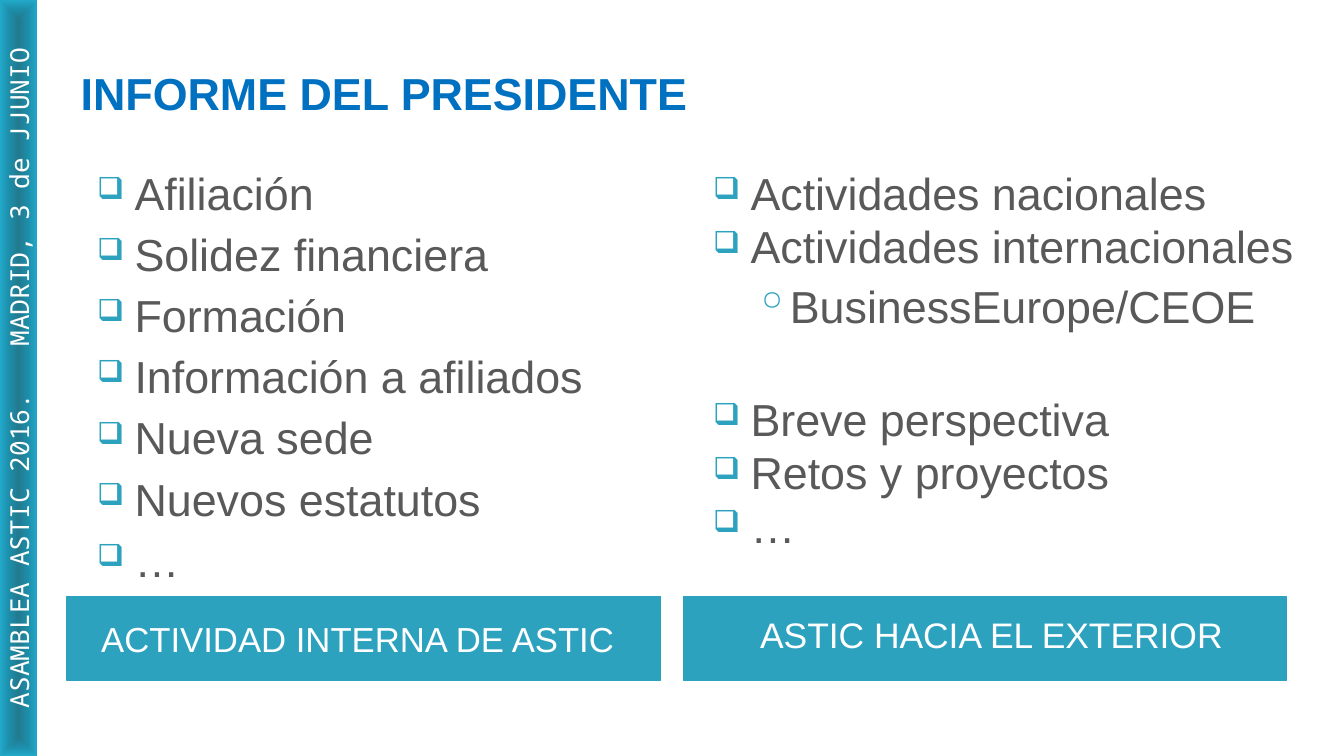
from lxml import etree
from pptx import Presentation
from pptx.dml.color import RGBColor
from pptx.enum import shapes, text
from pptx.oxml import ns, parse_xml
from pptx.util import Pt

COLORS = {"teal": "2DA2BF", "blue": "0070C0", "gray": "595959", "white": "FFFFFF",
          "bar_core": "227A8F", "bar_middle": "1D8EAA", "bar_edge": "22A9CA"}
LEFT, ALIGN_CENTER = text.PP_ALIGN.LEFT, text.PP_ALIGN.CENTER


def write(para, words, size=24, color="gray", font="Arial", bold=False,
          align=LEFT, before=0, bullet=None, scale=100, indent=0, hang=0):
    """Add a formatted run, with an optional bullet on the paragraph."""
    if bullet:
        props = para._p.get_or_add_pPr()
        props.set("marL", str(Pt(indent)))
        props.set("indent", str(-Pt(hang)))
        tint = etree.SubElement(props, ns.qn("a:buClr"))
        etree.SubElement(tint, ns.qn("a:srgbClr"), val=COLORS["teal"])
        etree.SubElement(props, ns.qn("a:buSzPct"), val=str(scale * 1000))
        etree.SubElement(props, ns.qn("a:buChar"), char=bullet)
    para.alignment = align
    if before:
        para.space_before = Pt(before)
    span = para.add_run()
    span.text = words
    span.font.name, span.font.size, span.font.bold = font, Pt(size), bold
    span.font.color.rgb = RGBColor.from_string(COLORS[color])
    return span


deck = Presentation()
deck.slide_width, deck.slide_height = Pt(720), Pt(405)
page = deck.slides.add_slide(deck.slide_layouts[5])

# Side bar, turned to read upwards
bar_length, bar_width = 405, 20
bar = page.shapes.add_shape(
    shapes.MSO_SHAPE.RECTANGLE, Pt((bar_width - bar_length) / 2),
    Pt((bar_length - bar_width) / 2), Pt(bar_length), Pt(bar_width))
bar.rotation = 270
bar.shadow.inherit = False
bar.line.fill.background()
stops = "".join(
    f'<a:gs pos="{place * 1000}"><a:srgbClr val="{COLORS[name]}"/></a:gs>'
    for place, name in ((0, "bar_core"), (50, "bar_middle"), (100, "bar_edge")))
gradient = parse_xml(
    f'<a:gradFill {ns.nsdecls("a")}><a:gsLst>{stops}</a:gsLst><a:path path="shape">'
    '<a:fillToRect l="50000" t="50000" r="50000" b="50000"/></a:path></a:gradFill>')
bar._element.spPr.find(ns.qn("a:prstGeom")).addnext(gradient)
frame = bar.text_frame
frame.vertical_anchor = text.MSO_ANCHOR.MIDDLE
frame.margin_top = frame.margin_bottom = 0
mono = {"size": 14, "color": "white", "font": "Noto Sans Mono", "align": ALIGN_CENTER}
write(frame.paragraphs[0], "ASAMBLEA ASTIC 2016.", **mono)
gap = write(frame.paragraphs[0], " ", **mono)
gap.font._element.set("spc", "1680")  # widens the space to three characters
write(frame.paragraphs[0], "MADRID, 3 de JJUNIO", **mono)

# Title
title = page.shapes.title
title.left, title.top, title.width, title.height = Pt(36), Pt(16), Pt(648), Pt(67.5)
title.text_frame.vertical_anchor = text.MSO_ANCHOR.MIDDLE
write(title.text_frame.paragraphs[0], "INFORME DEL PRESIDENTE", color="blue", bold=True)

# Bulleted columns: words, level, space before
lists = [
    (36, 318, [("Afiliación", 0, 0)] + [(words, 0, 4) for words in (
        "Solidez financiera", "Formación", "Información a afiliados",
        "Nueva sede", "Nuevos estatutos", "…")]),
    (366, 340, [("Actividades nacionales", 0, 0), ("Actividades internacionales", 0, 0),
                ("BusinessEurope/CEOE", 1, 3.2), ("Breve perspectiva", 0, 31.5),
                ("Retos y proyectos", 0, 0), ("…", 0, 0)]),
]
levels = [{"bullet": "❑", "scale": 68, "indent": 29, "hang": 20},
          {"bullet": "◦", "scale": 100, "indent": 49, "hang": 18}]
for left, width, items in lists:
    box = page.shapes.add_textbox(Pt(left), Pt(85), Pt(width), Pt(232.5))
    frame = box.text_frame
    frame.word_wrap = True
    for index, (words, level, before) in enumerate(items):
        para = frame.add_paragraph() if index else frame.paragraphs[0]
        para.level = level
        write(para, words, before=before, **levels[level])

# Column captions
captions = [(36, 318, "ACTIVIDAD INTERNA DE ASTIC", 18.6, 21, 1),
            (366, 323, "ASTIC HACIA EL EXTERIOR", 19, 7.2, 0.8)]
for left, width, words, size, right_margin, spacing in captions:
    caption = page.shapes.add_shape(
        shapes.MSO_SHAPE.RECTANGLE, Pt(left), Pt(319.5), Pt(width), Pt(45))
    caption.shadow.inherit = False
    caption.fill.solid()
    caption.fill.fore_color.rgb = RGBColor.from_string(COLORS["teal"])
    caption.line.color.rgb = RGBColor.from_string(COLORS["teal"])
    caption.line.width = Pt(0.75)
    frame = caption.text_frame
    frame.word_wrap = True
    frame.vertical_anchor = text.MSO_ANCHOR.MIDDLE
    frame.margin_left, frame.margin_right = Pt(14.4), Pt(right_margin)
    frame.paragraphs[0].line_spacing = spacing
    write(frame.paragraphs[0], words, size=size, color="white", align=ALIGN_CENTER)

deck.save("out.pptx")
